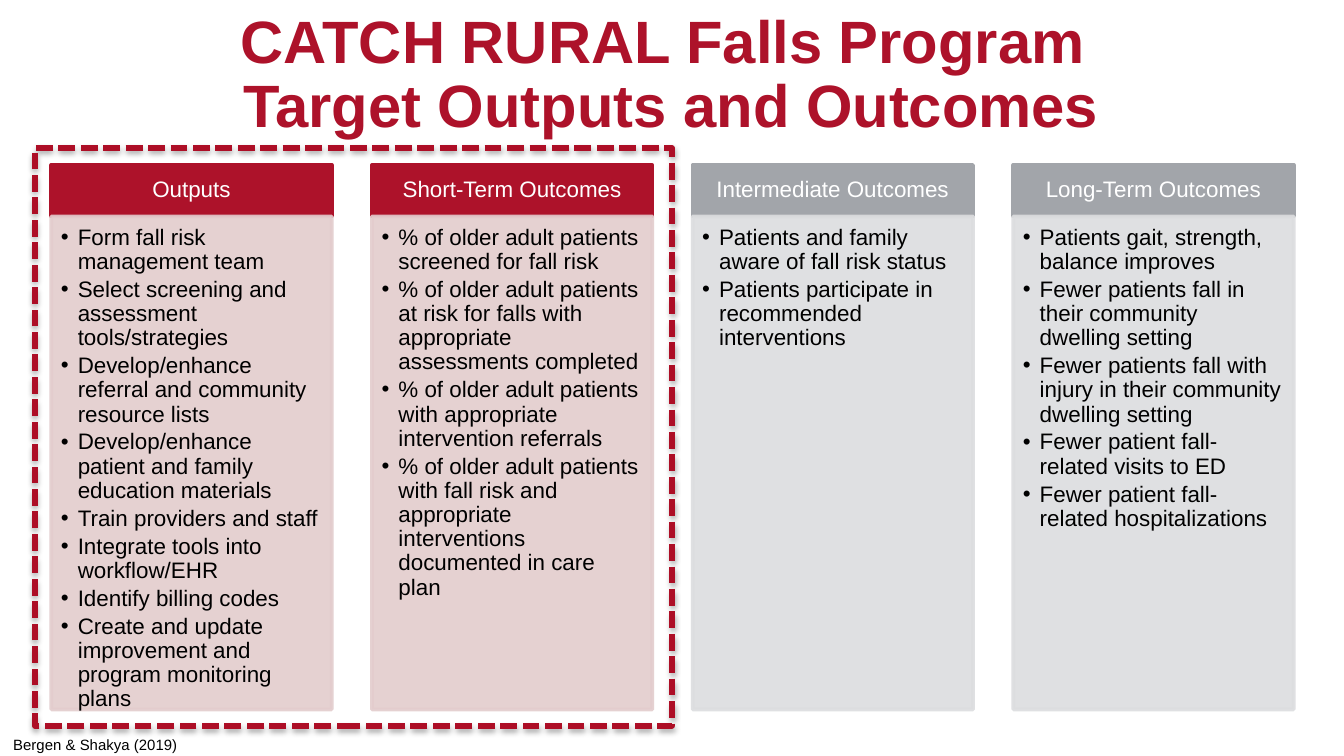
from lxml.etree import SubElement
from pptx import Presentation
from pptx.dml.color import RGBColor
from pptx.enum.dml import MSO_LINE
from pptx.enum.shapes import MSO_SHAPE
from pptx.enum.text import MSO_ANCHOR, MSO_AUTO_SIZE, PP_ALIGN
from pptx.oxml.ns import qn
from pptx.util import Cm, Pt

RED, GREY = "AD122A", "A2A5AA"
PINK, PALE = "E3CCCD", "DCDDDF"
LEFT, STEP, WIDE = 0.97, 6.06, 5.3
TOP, HEAD, BODY = 3.12, 0.97, 9.32

COLUMNS = [
    ("Outputs", RED, PINK, [
        "Form fall risk management team",
        "Select screening and assessment tools/strategies",
        "Develop/enhance referral and community resource lists",
        "Develop/enhance patient and family education materials",
        "Train providers and staff",
        "Integrate tools into workflow/EHR",
        "Identify billing codes",
        "Create and update improvement and program monitoring plans",
    ]),
    ("Short-Term Outcomes", RED, PINK, [
        "% of older adult patients screened for fall risk",
        "% of older adult patients at risk for falls with appropriate "
        "assessments completed",
        "% of older adult patients with appropriate intervention referrals",
        "% of older adult patients with fall risk and appropriate "
        "interventions documented in care plan",
    ]),
    ("Intermediate Outcomes", GREY, PALE, [
        "Patients and family aware of fall risk status",
        "Patients participate in recommended interventions",
    ]),
    ("Long-Term Outcomes", GREY, PALE, [
        "Patients gait, strength, balance improves",
        "Fewer patients fall in their community dwelling setting",
        "Fewer patients fall with injury in their community dwelling setting",
        "Fewer patient fall-related visits to ED",
        "Fewer patient fall-related hospitalizations",
    ]),
]


def color(code):
    return RGBColor.from_string(code)


class Deck:
    font = "Arial"

    def __init__(self, slide):
        self.slide = slide

    def place(self, shape, *area):
        shape.left, shape.top, shape.width, shape.height = map(Cm, area)

    def paint(self, shape, code):
        shape.fill.solid()
        shape.fill.fore_color.rgb = color(code)
        shape.line.color.rgb = color(code)
        shape.line.width = Pt(2)

    def frame(self, shape, pads, anchor=MSO_ANCHOR.TOP):
        """Set insets (left, top, right, bottom) and anchor; return the frame."""
        text = shape.text_frame
        text.word_wrap = True
        text.auto_size = MSO_AUTO_SIZE.NONE
        text.vertical_anchor = anchor
        (text.margin_left, text.margin_top,
         text.margin_right, text.margin_bottom) = map(Cm, pads)
        return text

    def run(self, para, words, size, code, bold=False):
        run = para.add_run()
        run.text = words
        run.font.name, run.font.size, run.font.bold = self.font, Pt(size), bold
        run.font.color.rgb = color(code)

    def title(self, lines):
        shape = self.slide.shapes.title
        self.place(shape, 0.94, 0.15, 23.5, 2.57)
        para = self.frame(shape, (0.25, 0, 0.25, 0), MSO_ANCHOR.MIDDLE).paragraphs[0]
        para.alignment, para.line_spacing = PP_ALIGN.CENTER, 0.9
        for i, line in enumerate(lines):
            if i:
                para.add_line_break()
            self.run(para, line, 32, RED, True)

    def rect(self, *area):
        shape = self.slide.shapes.add_shape(MSO_SHAPE.RECTANGLE, *map(Cm, area))
        shape.shadow.inherit = False
        return shape

    def header(self, words, code, left):
        shape = self.rect(left, TOP, WIDE, HEAD)
        self.paint(shape, code)
        para = self.frame(shape, (0.23, 0.13, 0.23, 0.13), MSO_ANCHOR.MIDDLE).paragraphs[0]
        para.alignment, para.line_spacing = PP_ALIGN.CENTER, 0.9
        self.run(para, words, 12, "FFFFFF")
        return shape

    def bullets(self, shape, items, code, left):
        self.place(shape, left, TOP + HEAD, WIDE, BODY)
        self.paint(shape, code)
        for tint in shape.element.spPr.iter(qn("a:srgbClr")):
            SubElement(tint, qn("a:alpha"), val="90000")
        text = self.frame(shape, (0.18, 0.18, 0.23, 0.25))
        for i, item in enumerate(items):
            para = text.add_paragraph() if i else text.paragraphs[0]
            props = para._p.get_or_add_pPr()
            props.set("marL", str(Cm(0.32)))
            props.set("indent", str(-Cm(0.32)))
            SubElement(props, qn("a:buFont"), typeface=self.font)
            SubElement(props, qn("a:buChar"), char="•")
            para.alignment, para.line_spacing = PP_ALIGN.LEFT, 0.9
            para.space_before, para.space_after = Pt(0), Pt(2)
            self.run(para, item, 12, "000000")

    def outline(self, *area):
        """Draw the dashed frame with its soft shadow."""
        shape = self.rect(*area)
        shape.fill.background()
        shape.line.color.rgb = color("AD0E26")
        shape.line.width = Pt(3)
        shape.line.dash_style = MSO_LINE.SQUARE_DOT
        effects = shape.element.spPr.find(qn("a:effectLst"))
        shade = SubElement(effects, qn("a:outerShdw"), blurRad=str(Pt(3.1)),
                           dist=str(Pt(1.8)), dir="5400000", rotWithShape="0")
        tint = SubElement(shade, qn("a:srgbClr"), val="000000")
        SubElement(tint, qn("a:alpha"), val="35000")

    def note(self, words, *area):
        box = self.slide.shapes.add_textbox(*map(Cm, area))
        text = self.frame(box, (0.25, 0.13, 0.25, 0.13))
        self.run(text.paragraphs[0], words, 8, "000000")


def main():
    show = Presentation()
    show.slide_width, show.slide_height = Cm(25.4), Cm(14.29)
    slide = show.slides.add_slide(show.slide_layouts.get_by_name("Comparison"))
    deck = Deck(slide)
    deck.title(["CATCH RURAL Falls Program ", "Target Outputs and Outcomes"])
    bodies = list(slide.placeholders)[1:]
    for i, (body, (name, dark, light, items)) in enumerate(zip(bodies, COLUMNS)):
        left = LEFT + i * STEP
        deck.bullets(body, items, light, left)
        body.element.addprevious(deck.header(name, dark, left).element)
    deck.outline(0.66, 2.8, 12.04, 10.92)
    deck.note("Bergen & Shakya (2019)", 0, 13.77, 12.7, 0.6)
    show.save("out.pptx")


if __name__ == "__main__":
    main()
